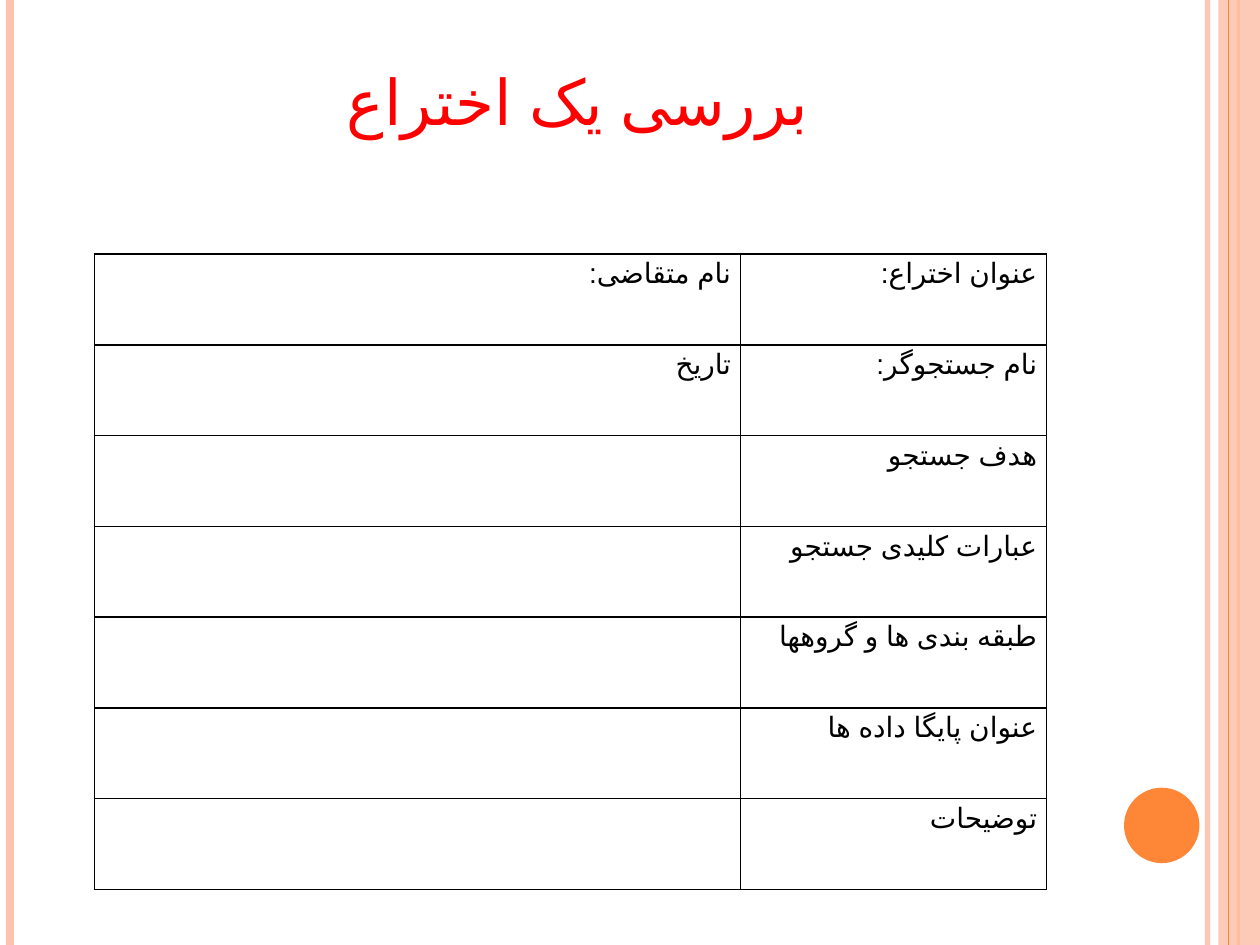
from lxml.etree import SubElement
from pptx import Presentation
from pptx.dml.color import RGBColor
from pptx.enum.shapes import MSO_CONNECTOR, MSO_SHAPE
from pptx.enum.text import MSO_ANCHOR, PP_ALIGN
from pptx.oxml.ns import qn
from pptx.util import Cm, Pt

WIDTH, HEIGHT = 25.4, 19.05
PEACH, ORANGE, RED, BLACK = "FEC3AE", "FE8637", "FF0000", "000000"

HEADING = "بررسی یک اختراع"
FORM_ROWS = [
    ("نام متقاضی:", "عنوان اختراع:"),
    ("تاریخ", "نام جستجوگر:"),
    ("", "هدف جستجو"),
    ("", "عبارات کلیدی جستجو"),
    ("", "طبقه بندی ها و گروهها"),
    ("", "عنوان پایگا داده ها"),
    ("", "توضیحات"),
]
COLUMN_WIDTHS = [13.03, 6.17]
ROW_HEIGHT = 1.83
FORM_LEFT, FORM_TOP = 1.9, 5.12

STRIPES_BEHIND = [(24.34, PEACH, 3, 93), (0.21, PEACH, 4.5, 100), (24.97, ORANGE, 1.5, 100)]
STRIPE_FRONT = (24.77, ORANGE, 0.75, 100)
BAND = (MSO_SHAPE.RECTANGLE, (24.56, 0, 0.84, HEIGHT), PEACH, 87)
DOT = (MSO_SHAPE.OVAL, (22.66, 15.88, 1.52, 1.52), ORANGE, 100)

PERSIAN_FONT = "Arial"
HEADING_FONT = {"name": "Cambria", "size": Pt(36), "bold": False}
FORM_FONT = {"name": "Calibri", "size": Pt(16), "bold": False}
CELL_FORMAT = {
    "margin_left": Cm(0.19), "margin_right": Cm(0.19),
    "margin_top": 0, "margin_bottom": 0,
    "vertical_anchor": MSO_ANCHOR.TOP,
}


def apply(target, values):
    for key, value in values.items():
        setattr(target, key, value)


def paint(fill, color, opacity=100):
    fill.solid()
    fill.fore_color.rgb = RGBColor.from_string(color)
    if opacity < 100:
        tint = fill._xPr.find(qn("a:solidFill"))[0]
        SubElement(tint, qn("a:alpha"), val=str(opacity * 1000))


def add_stripe(slide, x, color, weight, opacity):
    stripe = slide.shapes.add_connector(MSO_CONNECTOR.STRAIGHT, Cm(x), 0, Cm(x), Cm(HEIGHT))
    stripe.line.width = Pt(weight)
    paint(stripe.line.fill, color, opacity)
    SubElement(stripe._element.spPr, qn("a:effectLst"))


def add_ornament(slide, preset, place, color, opacity):
    ornament = slide.shapes.add_shape(preset, *map(Cm, place))
    ornament.shadow.inherit = False
    ornament.line.fill.background()
    paint(ornament.fill, color, opacity)


def write(frame, wording, font, color, align, spacing=None):
    paragraph = frame.paragraphs[0]
    apply(paragraph, {"alignment": align, "line_spacing": spacing})
    paragraph._p.get_or_add_pPr().set("rtl", "1")
    run = paragraph.add_run()
    run.text = wording
    apply(run.font, font)
    paint(run.font.fill, color)
    properties = run._r.get_or_add_rPr()
    properties.set("lang", "fa-IR")
    SubElement(properties, qn("a:cs"), typeface=PERSIAN_FONT)
    return properties


def add_borders(cell):
    properties = cell._tc.get_or_add_tcPr()
    for side in ("a:lnL", "a:lnR", "a:lnT", "a:lnB"):
        border = SubElement(properties, qn(side), w=str(Pt(1)))
        SubElement(SubElement(border, qn("a:solidFill")), qn("a:srgbClr"), val=BLACK)


def add_form(slide):
    form = slide.shapes.add_table(
        len(FORM_ROWS), len(COLUMN_WIDTHS), Cm(FORM_LEFT), Cm(FORM_TOP),
        Cm(sum(COLUMN_WIDTHS)), Cm(ROW_HEIGHT * len(FORM_ROWS))).table
    apply(form, {"first_row": False, "horz_banding": False})
    for column, width in zip(form.columns, COLUMN_WIDTHS):
        column.width = Cm(width)
    for row, wordings in zip(form.rows, FORM_ROWS):
        row.height = Cm(ROW_HEIGHT)
        for cell, wording in zip(row.cells, wordings):
            apply(cell, CELL_FORMAT)
            add_borders(cell)
            cell.fill.background()
            if wording:
                write(cell.text_frame, wording, FORM_FONT, BLACK, PP_ALIGN.RIGHT, 1.15)


def add_heading(slide):
    heading = slide.shapes.title
    apply(heading, {"left": Cm(1.27), "top": Cm(0.76), "width": Cm(20.75), "height": Cm(2.16)})
    apply(heading.text_frame, {"vertical_anchor": MSO_ANCHOR.BOTTOM, "word_wrap": True})
    write(heading.text_frame, HEADING, HEADING_FONT, RED, PP_ALIGN.CENTER).set("cap", "small")


def main():
    deck = Presentation()
    apply(deck, {"slide_width": Cm(WIDTH), "slide_height": Cm(HEIGHT)})
    slide = deck.slides.add_slide(deck.slide_layouts[5])
    paint(slide.background.fill, "FFFFFF")
    for stripe in STRIPES_BEHIND:
        add_stripe(slide, *stripe)
    add_ornament(slide, *BAND)
    add_stripe(slide, *STRIPE_FRONT)
    add_ornament(slide, *DOT)
    add_heading(slide)
    add_form(slide)
    deck.save("out.pptx")


if __name__ == "__main__":
    main()
